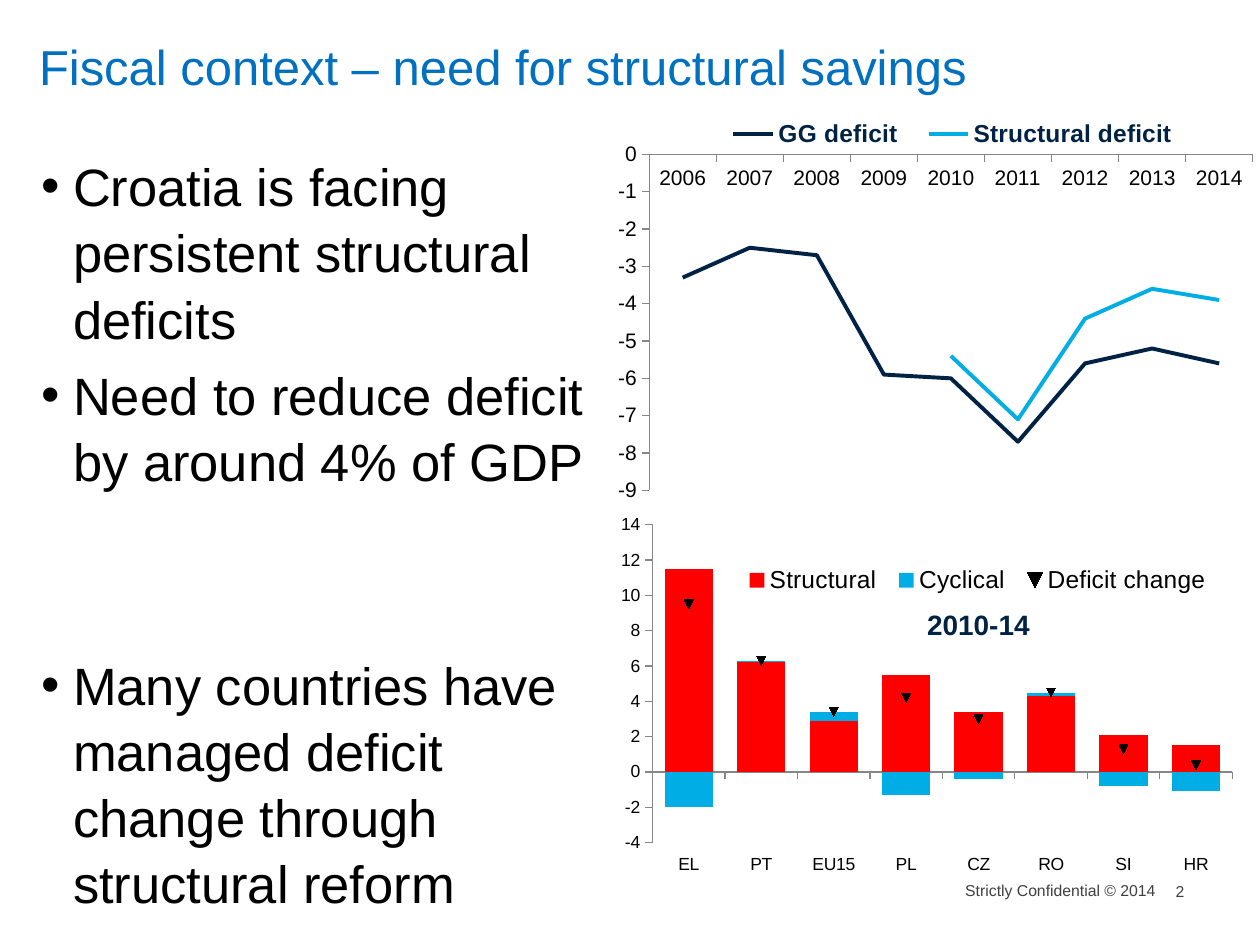
from pptx import Presentation
from pptx.chart.data import CategoryChartData as Data
from pptx.dml.color import RGBColor as Rgb
from pptx.enum.chart import XL_CHART_TYPE as Kind, XL_LEGEND_POSITION as Spot
from pptx.enum.chart import XL_MARKER_STYLE as Mark, XL_TICK_LABEL_POSITION as Label
from pptx.enum.chart import XL_TICK_MARK as Tick
from pptx.enum.text import MSO_ANCHOR as Anchor, MSO_AUTO_SIZE as Fit, PP_ALIGN as Align
from pptx.oxml import parse_xml
from pptx.oxml.ns import nsdecls, qn
from pptx.util import Inches, Pt

COLORS = {"title": "0070C0", "text": "000000", "navy": "002345", "cyan": "00ADE4",
          "red": "FF0000", "axis": "868686", "foot": "404040"}


def tint(name):
    return Rgb.from_string(COLORS[name])


def style(font, size, color, bold=False):
    font.name, font.size, font.bold = "Arial", Pt(size), bold
    font.color.rgb = tint(color)


def place(shape, box):
    shape.left, shape.top, shape.width, shape.height = map(Inches, box)


def frame(shape, anchor=Anchor.TOP, top=0, bottom=0):
    text = shape.text_frame
    text.word_wrap, text.auto_size = True, Fit.NONE
    text.vertical_anchor = anchor
    text.margin_left = text.margin_right = 0
    text.margin_top, text.margin_bottom = Inches(top), Inches(bottom)
    return text


def add_title(slide, box):
    shape = slide.shapes.title
    place(shape, box)
    text = frame(shape, Anchor.BOTTOM, bottom=0.02)
    text.text = "Fiscal context – need for structural savings"
    para = text.paragraphs[0]
    para.alignment = Align.LEFT
    style(para.font, 28, "title")


def add_list(slide, box):
    points = [("Croatia is facing persistent structural deficits", 0),
              ("Need to reduce deficit by around 4% of GDP", 6),
              ("Many countries have managed deficit change through structural reform", 90)]
    shape = slide.placeholders[1]
    place(shape, box)
    text = frame(shape)
    text.text = "\n".join(words for words, gap in points)
    for para, (words, gap) in zip(text.paragraphs, points):
        props = para._p.get_or_add_pPr()
        props.set("marL", str(Inches(0.25)))
        props.set("indent", str(-Inches(0.25)))
        props.append(parse_xml(f'<a:buChar {nsdecls("a")} char="•"/>'))
        para.space_before, para.line_spacing = Pt(gap), 1.05
        style(para.font, 30, "text")


def add_note(slide, box, words, size, color, align, bold=False):
    shape = slide.shapes.add_textbox(*map(Inches, box))
    text = frame(shape, top=0.04)
    text.text = words
    para = text.paragraphs[0]
    para.alignment = align
    style(para.font, size, color, bold)


def lay_out(node, index, box, inner=False):
    for old in node.findall(qn("c:layout")):
        node.remove(old)
    target = '<c:layoutTarget val="inner"/>' if inner else ""
    modes = "".join(f'<c:{side}Mode val="edge"/>' for side in "xy")
    sizes = "".join(f'<c:{side} val="{size}"/>' for side, size in zip("xywh", box))
    node.insert(index, parse_xml(
        f'<c:layout {nsdecls("c")}><c:manualLayout>{target}{modes}{sizes}'
        '</c:manualLayout></c:layout>'))


def add_chart(slide, box, kind, cats, rows, size, scale, plot, key):
    data = Data()
    data.categories = cats
    for name, vals in rows:
        data.add_series(name, vals)
    chart = slide.shapes.add_chart(kind, *map(Inches, box), data).chart
    chart.has_title = False
    style(chart.font, size, "text")
    chart.has_legend = True
    chart.legend.position = Spot.TOP
    chart.legend.include_in_layout = False
    lay_out(chart.legend._element, 1, key)
    lay_out(chart._chartSpace.chart.plotArea, 0, plot, inner=True)
    axis = chart.value_axis
    axis.minimum_scale, axis.maximum_scale, axis.major_unit = scale
    axis.tick_labels.number_format = "General"
    axis.tick_labels.number_format_is_linked = False
    for axis in (chart.category_axis, chart.value_axis):
        axis.has_major_gridlines = False
        axis.major_tick_mark, axis.minor_tick_mark = Tick.OUTSIDE, Tick.NONE
        axis.format.line.color.rgb = tint("axis")
        axis.format.line.width = Pt(0.75)
        style(axis.tick_labels.font, size, "text")
    return chart


def add_trend(slide, box):
    cats = [str(year) for year in range(2006, 2015)]
    rows = [("GG deficit", [-3.3, -2.5, -2.7, -5.9, -6, -7.7, -5.6, -5.2, -5.6]),
            ("Structural deficit", [None] * 4 + [-5.4, -7.1, -4.4, -3.6, -3.9])]
    chart = add_chart(slide, box, Kind.LINE, cats, rows, 12, (-9, 0, 1),
                      (0.066, 0.12, 0.923, 0.828), (0.16, 0.03, 0.74, 0.08))
    style(chart.legend.font, 14, "navy", True)
    for line, color in zip(chart.plots[0].series, ("navy", "cyan")):
        line.smooth = False
        line.format.line.color.rgb = tint(color)
        line.format.line.width = Pt(2.25)
        line.marker.style = Mark.NONE


def split_line(chart):
    bars = chart._chartSpace.chart.plotArea.find(qn("c:barChart"))
    row = bars.findall(qn("c:ser"))[-1]
    for flag in row.findall(qn("c:invertIfNegative")):
        row.remove(flag)
    line = parse_xml(f'<c:lineChart {nsdecls("c")}><c:grouping val="standard"/>'
                     '<c:varyColors val="0"/><c:marker val="1"/></c:lineChart>')
    line.insert(2, row)
    for axis in bars.findall(qn("c:axId")):
        line.append(parse_xml(f'<c:axId {nsdecls("c")} val="{axis.get("val")}"/>'))
    bars.addnext(line)
    return chart.plots[1].series[0]


def add_change(slide, box):
    cats = ["EL", "PT", "EU15", "PL", "CZ", "RO", "SI", "HR"]
    rows = [("Structural", [11.5, 6.2, 2.9, 5.5, 3.4, 4.3, 2.1, 1.5]),
            ("Cyclical", [-2, 0.1, 0.5, -1.3, -0.4, 0.2, -0.8, -1.1]),
            ("Deficit change", [9.5, 6.3, 3.4, 4.2, 3, 4.5, 1.3, 0.4])]
    chart = add_chart(slide, box, Kind.COLUMN_STACKED, cats, rows, 10, (-4, 14, 2),
                      (0.072, 0.046, 0.897, 0.855), (0.2, 0.15, 0.75, 0.09))
    style(chart.legend.font, 14, "text")
    chart.category_axis.tick_label_position = Label.LOW
    bars = chart.plots[0]
    bars.gap_width, bars.overlap, bars.vary_by_categories = 50, 100, False
    dots = split_line(chart)
    for bar, color in zip(bars.series, ("red", "cyan")):
        bar.invert_if_negative = False
        bar.format.fill.solid()
        bar.format.fill.fore_color.rgb = tint(color)
    dots.smooth = False
    dots.format.line.fill.background()
    dots.marker.style, dots.marker.size = Mark.AUTOMATIC, 5
    dots.marker.format.fill.solid()
    dots.marker.format.fill.fore_color.rgb = tint("text")
    dots.marker.format.line.color.rgb = tint("text")
    left, top, width, height = box
    add_note(slide, (left + 1.47, top + 0.75, 2.97, 0.37), "2010-14", 16, "navy",
             Align.CENTER, True)


def add_foot(slide, box):
    left, top, width, height = box
    add_note(slide, (left, top, 1.58, height), "Strictly Confidential © 2014", 9,
             "foot", Align.RIGHT)
    add_note(slide, (left + width - 0.31, top + 0.01, 0.31, height), "2", 9,
             "foot", Align.LEFT)


def main():
    deck = Presentation()
    deck.slide_width, deck.slide_height = Inches(10), Inches(7.5)
    slide = deck.slides.add_slide(deck.slide_layouts[1])
    add_title(slide, (0.31, 0.15, 9.29, 0.63))
    add_list(slide, (0.33, 1.2, 4.48, 5.51))
    add_trend(slide, (4.81, 0.84, 5.19, 3.22))
    add_change(slide, (4.81, 4.03, 5.13, 2.95))
    add_foot(slide, (7.59, 6.95, 2.05, 0.24))
    deck.save("out.pptx")


if __name__ == "__main__":
    main()
